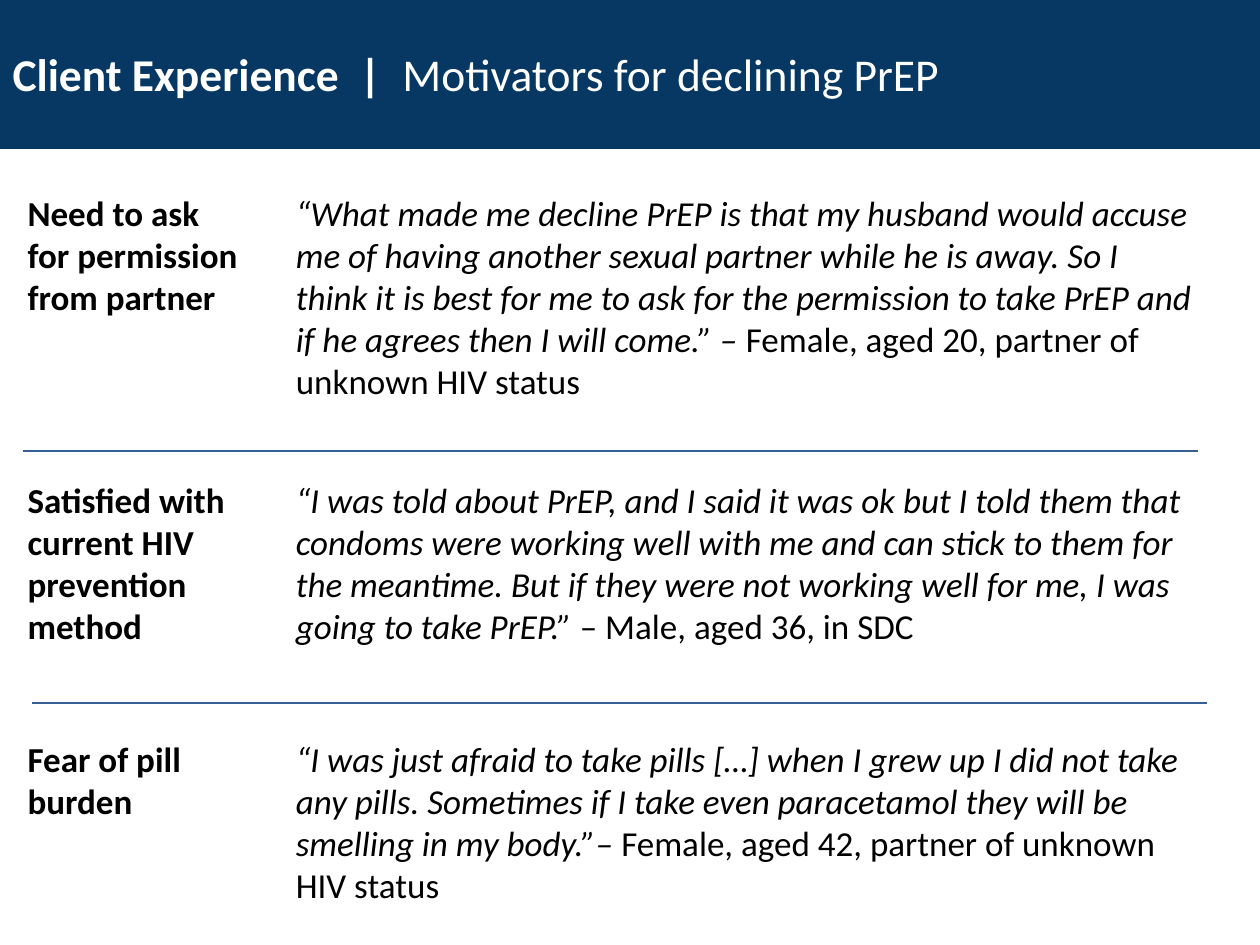
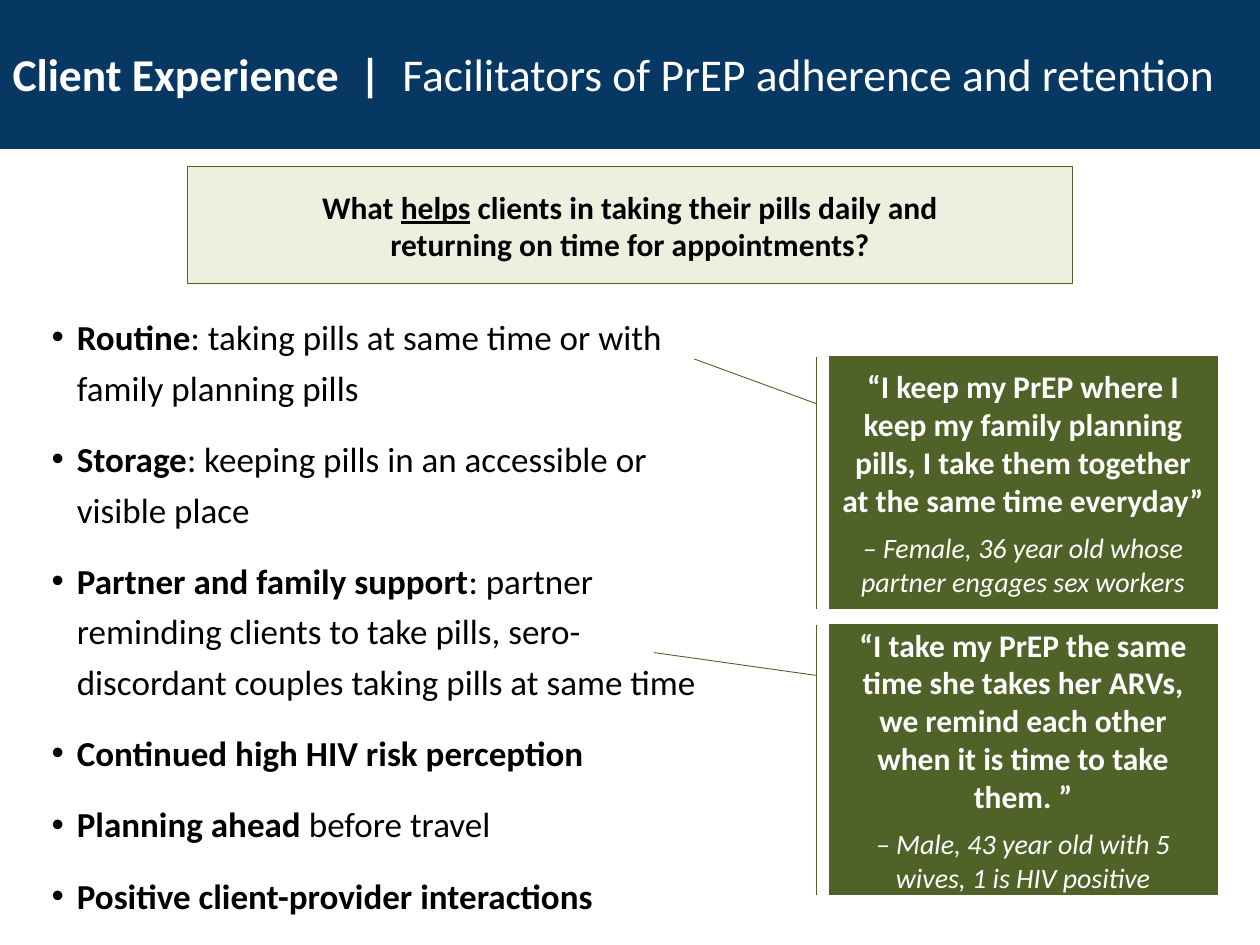
from dataclasses import dataclass

import pptx
import pptx.dml.color
import pptx.enum.shapes
import pptx.enum.text
import pptx.oxml
import pptx.util
from pptx.util import Inches

MSO_SHAPE = pptx.enum.shapes.MSO_SHAPE
ALIGN = pptx.enum.text.PP_ALIGN
ANCHOR = pptx.enum.text.MSO_ANCHOR


@dataclass(frozen=True)
class Theme:
    font: str = "Calibri"
    navy: str = "073763"
    rule: str = "376092"
    olive: str = "4F6228"
    pale: str = "EBF1DE"
    black: str = "000000"
    white: str = "FFFFFF"
    title: int = 26
    body: int = 20
    quote: int = 18
    source: int = 16


T = Theme()
BAND = (0, 0, 10, 1.17)
SECTION = "Client Experience  |  "

# label, quote, speaker, top of row, left and top of the rule below
MOTIVATORS = [
    ("Need to ask for permission from partner",
     "“What made me decline PrEP is that my husband would accuse me of having another "
     "sexual partner while he is away. So I think it is best for me to ask for the "
     "permission to take PrEP and if he agrees then I will come.” – ",
     "Female, aged 20, partner of unknown HIV status", 1.47, (0.18, 3.58)),
    ("Satisfied with current HIV prevention method",
     "“I was told about PrEP, and I said it was ok but I told them that condoms were "
     "working well with me and can stick to them for the meantime. But if they were not "
     "working well for me, I was going to take PrEP.” ",
     "– Male, aged 36, in SDC", 3.75, (0.25, 5.58)),
    ("Fear of pill burden",
     "“I was just afraid to take pills […] when I grew up I did not take any pills. "
     "Sometimes if I take even paracetamol they will be smelling in my body.”– ",
     "Female, aged 42, partner of unknown HIV status", 5.8, None),
]

FACILITATORS = [
    ("Routine", ": taking pills at same time or with family planning pills"),
    ("Storage", ": keeping pills in an accessible or visible place"),
    ("Partner and family support", ": partner reminding clients to take pills, "
     "sero-discordant couples taking pills at same time"),
    ("Continued high HIV risk perception", ""),
    ("Planning ahead ", "before travel"),
    ("Positive client-provider interactions", ""),
]

# box, tip of the pointer relative to the box, quote, speaker
CALLOUTS = [
    ((6.58, 2.83, 3.08, 2), (-1.07, 0.02),
     "“I keep my PrEP where I keep my family planning pills, I take them together "
     "at the same time everyday”",
     "– Female, 36 year old whose partner engages sex workers"),
    ((6.58, 4.96, 3.08, 2.14), (-1.39, 0.22),
     "“I take my PrEP the same time she takes her ARVs, we remind each other when "
     "it is time to take them. ”",
     "– Male, 43 year old with 5 wives, 1 is HIV positive"),
]


def rgb(color):
    return pptx.dml.color.RGBColor.from_string(color)


def inches(box):
    return [Inches(v) for v in box]


def write(p, runs, size, color=T.black, align=ALIGN.LEFT):
    """Fill a paragraph from (text, style) runs; style holds any of the letters b, i, u."""
    p.alignment = align
    p.font.name, p.font.size = T.font, pptx.util.Pt(size)
    p.font.color.rgb = rgb(color)
    for text, style in runs:
        r = p.add_run()
        r.text = text
        r.font.bold = "b" in style
        r.font.italic = "i" in style
        r.font.underline = "u" in style


def add_box(s, kind, box, fill, line, width):
    sp = s.shapes.add_shape(kind, *inches(box))
    sp.shadow.inherit = False
    sp.fill.solid()
    sp.fill.fore_color.rgb = rgb(fill)
    sp.line.color.rgb = rgb(line)
    sp.line.width = pptx.util.Pt(width)
    return sp


def add_text(s, box, runs, size, align=ALIGN.LEFT):
    tf = s.shapes.add_textbox(*inches(box)).text_frame
    tf.word_wrap = True
    write(tf.paragraphs[0], runs, size, align=align)


def place(sp, box):
    """Move a placeholder to a box and return its text frame."""
    sp.left, sp.top, sp.width, sp.height = inches(box)
    tf = sp.text_frame
    tf.word_wrap = True
    tf.auto_size = pptx.enum.text.MSO_AUTO_SIZE.NONE
    return tf


def add_titled_slide(prs, layout, topic):
    s = prs.slides.add_slide(prs.slide_layouts.get_by_name(layout))
    band = add_box(s, MSO_SHAPE.RECTANGLE, BAND, T.navy, T.navy, 2)
    s.shapes.title._element.addprevious(band._element)
    tf = place(s.shapes.title, BAND)
    tf.vertical_anchor = ANCHOR.MIDDLE
    write(tf.paragraphs[0], [(SECTION, "b"), (topic, "")], T.title, T.white)
    return s


def add_rule(s, left, top, width):
    ln = s.shapes.add_connector(pptx.enum.shapes.MSO_CONNECTOR.STRAIGHT,
                                *inches((left, top, left + width, top)))
    ln.line.color.rgb = rgb(T.rule)
    ln.line.width = pptx.util.Pt(1.5)
    ln._element.spPr.append(pptx.oxml.parse_xml(
        '<a:effectLst xmlns:a="http://schemas.openxmlformats.org/drawingml/2006/main"/>'))


def add_motivator(s, box, label, quote, speaker):
    left, top, width, height = box
    indent = 2.13
    add_text(s, (left, top, 1.92, height), [(label, "b")], T.body)
    add_text(s, (left + indent, top, width - indent, height),
             [(quote, "i"), (speaker, "")], T.body)


def add_question(s, box):
    left, top, width, height = box
    add_box(s, MSO_SHAPE.RECTANGLE, box, T.pale, T.olive, 0.75)
    add_text(s, (left + 0.5, top + 0.12, width - 1, height - 0.22),
             [("What ", "b"), ("helps", "bu"),
              (" clients in taking their pills daily and returning on time for appointments?", "b")],
             T.quote, ALIGN.CENTER)


def fill_facilitators(sp, box):
    tf = place(sp, box)
    for i, (name, detail) in enumerate(FACILITATORS):
        p = tf.add_paragraph() if i else tf.paragraphs[0]
        write(p, [(name, "b")] + ([(detail, "")] if detail else []), T.body)
        p.line_spacing = 1.2
        p.space_before, p.space_after = pptx.util.Pt(0), pptx.util.Pt(12)
        pPr = p._p.get_or_add_pPr()
        pPr.set("marL", str(Inches(0.2)))
        pPr.set("indent", str(-Inches(0.2)))


def add_callout(s, box, tip, quote, speaker):
    _, _, width, height = box
    sp = add_box(s, MSO_SHAPE.LINE_CALLOUT_1_BORDER_AND_ACCENT_BAR, box, T.olive, T.olive, 0.5)
    bar = (-0.1, 3 / 16 * height)
    for i, (x, y) in enumerate((bar, tip)):
        sp.adjustments[2 * i] = y / height
        sp.adjustments[2 * i + 1] = x / width
    tf = sp.text_frame
    tf.word_wrap = True
    tf.vertical_anchor = ANCHOR.MIDDLE
    write(tf.paragraphs[0], [(quote, "b")], T.quote, T.white, ALIGN.CENTER)
    p = tf.add_paragraph()
    write(p, [(speaker, "i")], T.source, T.white, ALIGN.CENTER)
    p.space_before = pptx.util.Pt(7)


def build_motivators(prs):
    s = add_titled_slide(prs, "Title Only", "Motivators for declining PrEP")
    for label, quote, speaker, top, rule in MOTIVATORS:
        add_motivator(s, (0.12, top, 9.46, 1.45), label, quote, speaker)
        if rule:
            add_rule(s, *rule, 9.33)


def build_facilitators(prs):
    s = add_titled_slide(prs, "Title and Content", "Facilitators of PrEP adherence and retention")
    add_question(s, (1.49, 1.32, 7.02, 0.93))
    fill_facilitators(s.placeholders[1], (0.31, 2.39, 5.36, 4.86))
    for callout in CALLOUTS:
        add_callout(s, *callout)


def main():
    prs = pptx.Presentation()
    prs.slide_width, prs.slide_height = inches((10, 7.5))
    build_motivators(prs)
    build_facilitators(prs)
    prs.save("out.pptx")


if __name__ == "__main__":
    main()
